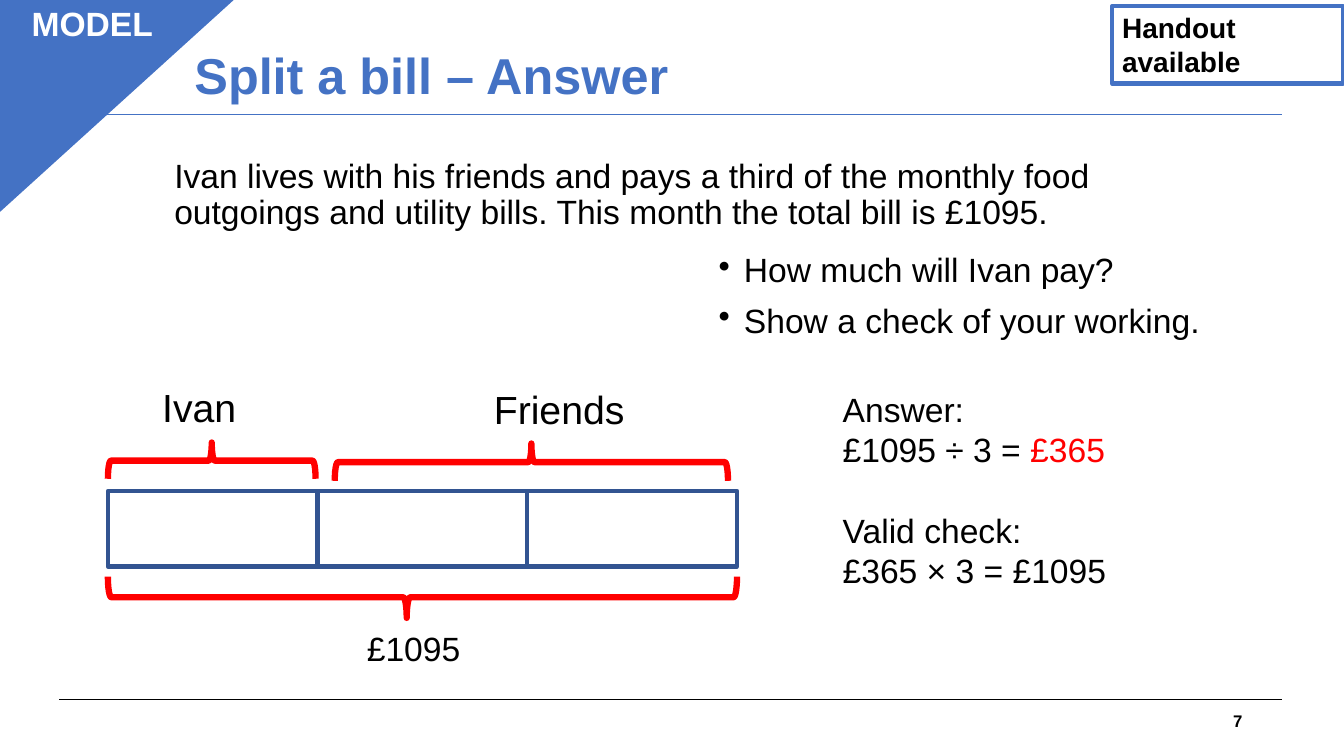
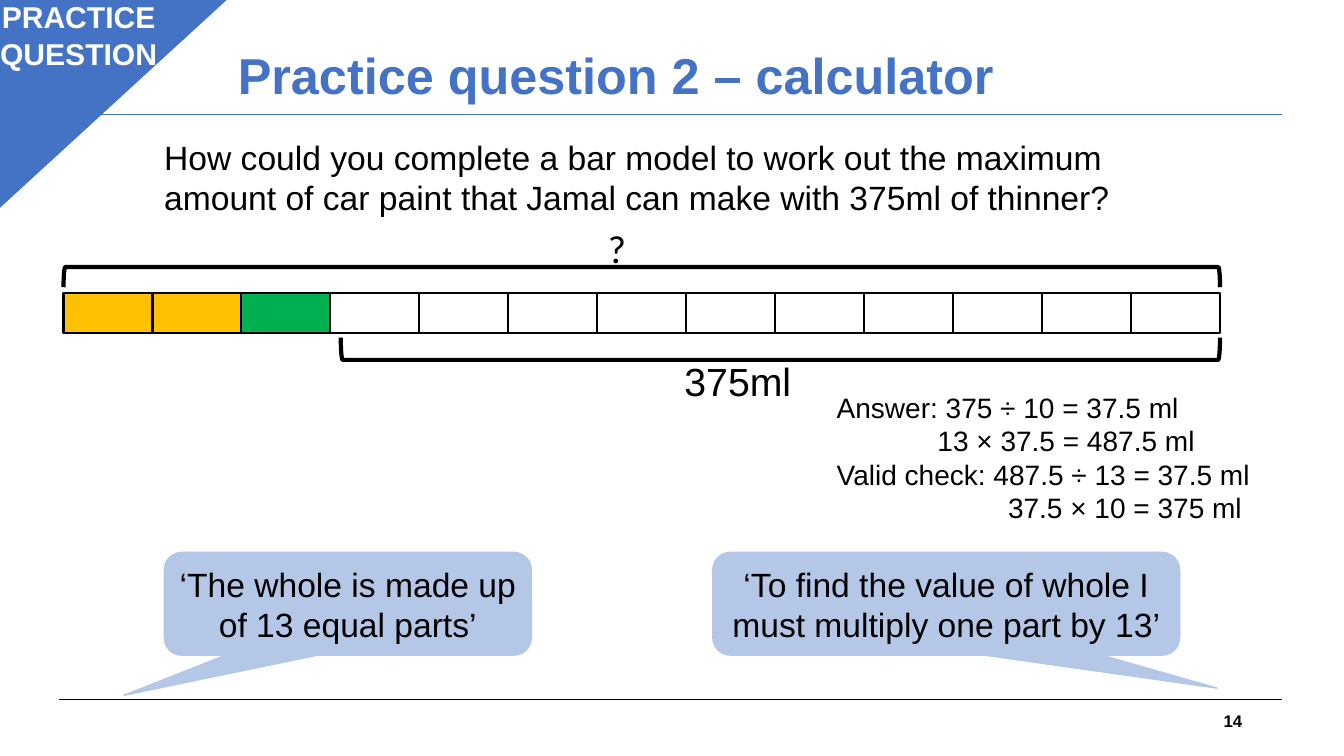
from lxml import etree
from pptx import Presentation
from pptx.dml.color import RGBColor
from pptx.enum.shapes import MSO_CONNECTOR, MSO_SHAPE as Kind
from pptx.enum.text import MSO_ANCHOR as Anchor, PP_ALIGN as Align
from pptx.oxml.ns import qn
from pptx.util import Inches, Pt

WIDE, HIGH = 13.33, 7.5
BLUE, NAVY, PALE = "4472C4", "325491", "B4C7E7"
BLACK, WHITE, RED = "000000", "FFFFFF", "FF0000"
GOLD, GREEN = "FFC000", "00B050"
TITLE = dict(size=36, color=BLUE, bold=True, line=0.9, anchor=Anchor.MIDDLE)
NUMBER = dict(size=12, bold=True, align=Align.RIGHT, anchor=Anchor.MIDDLE)
TAG = dict(color=WHITE, bold=True, align=Align.CENTER)
RULES = [(6.94, BLACK), (1.14, BLUE)]

# A paragraph is a list of (text, format) runs plus its own spacing.
SPLIT = dict(
    title="Split a bill – Answer", left=1.83, number="7", corner=(2.33, 2.12),
    tag=("MODEL", (0.03, -0.02, 1.77, 0.5), 24),
    texts=[
        ("Ivan lives with his friends and pays a third of the monthly food "
         "outgoings and utility bills. This month the total bill is £1095.",
         (1.63, 1.53, 9.79, 1.45), dict(line=0.9)),
        (["How much will Ivan pay?", "Show a check of your working."],
         (7.03, 2.47, 5.89, 1.28), dict(line=0.9, before=10, bullet="•")),
        ("Ivan", (1.51, 3.75, 1.02, 0.57), dict(size=28)),
        ("Friends", (4.8, 3.77, 1.59, 0.57), dict(size=28)),
        ("£1095", (3.54, 6.18, 1.59, 0.5), {}),
        (["Answer:",
          dict(runs=[("£1095 ÷ 3 = ", BLACK), ("£365", RED)]),
          dict(runs=[("Valid check:", BLACK)], before=28.5),
          "£365 × 3 = £1095"], (8.26, 3.81, 5.06, 2.12), {}),
    ],
    bar=dict(box=(1.07, 4.87, 6.24, 0.75), fills=[WHITE] * 3, edge=NAVY, weight=3),
    spans=dict(kind=Kind.LEFT_BRACE, edge=RED, weight=4.5, parts=[
        ((1.07, 5.72, 6.24, 0.41), 270, (0.083, 0.475)),
        ((1.07, 4.39, 2.06, 0.36), 90, ()),
        ((3.32, 4.4, 3.9, 0.37), 90, ())]),
    calls=[],
)
PAINT = dict(
    title="Practice question 2 – calculator", left=2.26, number="14",
    corner=(2.26, 2.08),
    tag=("PRACTICE QUESTION", (-0.28, -0.06, 2.12, 0.84), 21.5),
    texts=[
        ("How could you complete a bar model to work out the maximum amount of "
         "car paint that Jamal can make with 375ml of thinner?",
         (1.53, 1.31, 10.31, 0.91), {}),
        ("?", (5.93, 2.18, 0.38, 0.57), dict(size=28, font="Calibri")),
        ("375ml", (6.69, 3.5, 1.29, 0.57), dict(size=28)),
        (["Answer: 375 ÷ 10 = 37.5 ml",
          dict(runs=[("13 × 37.5 = 487.5 ml", BLACK)], indent=1),
          "Valid check: 487.5 ÷ 13 = 37.5 ml",
          dict(runs=[("37.5 × 10 = 375 ml", BLACK)], indent=1.7)],
         (8.2, 3.82, 4.63, 1.45), dict(size=20)),
    ],
    bar=dict(box=(0.63, 2.91, 11.47, 0.39),
             fills=[GOLD] * 2 + [GREEN] + [WHITE] * 10, edge=BLACK, weight=1.5),
    spans=dict(kind=Kind.LEFT_BRACKET, edge=BLACK, weight=3, parts=[
        ((3.38, 3.35, 8.72, 0.22), 270, ()),
        ((0.63, 2.65, 11.47, 0.2), 90, ())]),
    calls=[
        ("‘The whole is made up of 13 equal parts’",
         (1.63, 5.48, 3.64, 1.02), (-0.61, 0.89, 0.17)),
        ("‘To find the value of whole I must multiply one part by 13’",
         (7.07, 5.48, 4.63, 1.02), (0.58, 0.82, 0.17))],
)


def rgb(code):
    return RGBColor.from_string(code)


def indent(para, left, bullet=None):
    """Set the left margin in inches, with a hanging bullet if one is given."""
    props = para._p.get_or_add_pPr()
    props.set("marL", str(Inches(left)))
    if bullet:
        props.set("indent", str(-Inches(left)))
        etree.SubElement(props, qn("a:buChar")).set("char", bullet)


def write(frame, text, size=24, color=BLACK, bold=False, font="Arial",
          align=Align.LEFT, anchor=Anchor.TOP, line=None, before=0, bullet=None):
    frame.word_wrap = True
    frame.vertical_anchor = anchor
    for i, item in enumerate(text if isinstance(text, list) else [text]):
        if isinstance(item, str):
            item = dict(runs=[(item, color)])
        para = frame.add_paragraph() if i else frame.paragraphs[0]
        look = dict(alignment=align, line_spacing=line,
                    space_before=Pt(item.get("before", before)))
        for name, value in look.items():
            setattr(para, name, value)
        if bullet:
            indent(para, 0.25, bullet)
        elif "indent" in item:
            indent(para, item["indent"])
        for words, tint in item["runs"]:
            for j, part in enumerate(words.split("\n")):
                if j:
                    para.add_line_break()
                run = para.add_run()
                run.text = part
                for name, value in dict(size=Pt(size), bold=bold, name=font).items():
                    setattr(run.font, name, value)
                run.font.color.rgb = rgb(tint)


def label(slide, text, box, **look):
    write(slide.shapes.add_textbox(*map(Inches, box)).text_frame, text, **look)


def draw(slide, kind, box, fill=None, edge=BLACK, weight=1.0, turn=0, adjust=()):
    """Add a shape that covers box once it is turned by 0, 90 or 270 degrees."""
    x, y, w, h = box
    if turn:
        x, y, w, h = x + (w - h) / 2, y + (h - w) / 2, h, w
    shape = slide.shapes.add_shape(kind, *map(Inches, (x, y, w, h)))
    shape.rotation = turn
    shape.shadow.inherit = False
    for i, value in enumerate(adjust):
        shape.adjustments[i] = value
    if fill:
        shape.fill.solid()
        shape.fill.fore_color.rgb = rgb(fill)
    else:
        shape.fill.background()
    shape.line.color.rgb = rgb(edge)
    shape.line.width = Pt(weight)
    return shape


def rule(slide, y, color):
    ends = map(Inches, (0.59, y, 12.72, y))
    line = slide.shapes.add_connector(MSO_CONNECTOR.STRAIGHT, *ends)
    line.line.color.rgb = rgb(color)
    line.line.width = Pt(0.75)
    etree.SubElement(line._element.spPr, qn("a:effectLst"))


def build(deck, data):
    slide = deck.slides.add_slide(deck.slide_layouts[6])
    for y, color in RULES:
        rule(slide, y, color)
    right, low = data["corner"]
    draw(slide, Kind.RIGHT_TRIANGLE, (-0.03, -0.02, right + 0.03, low + 0.02),
         BLUE, BLUE, turn=90)
    words, box, size = data["tag"]
    label(slide, words, box, size=size, **TAG)
    label(slide, data["title"], (data["left"], 0.05, 9.55, 1.45), **TITLE)
    label(slide, data["number"], (9.42, 6.95, 3, 0.4), **NUMBER)

    bar = data["bar"]
    x, y, w, h = bar["box"]
    step = w / len(bar["fills"])
    for i, fill in enumerate(bar["fills"]):
        draw(slide, Kind.RECTANGLE, (x + i * step, y, step, h), fill,
             bar["edge"], bar["weight"])
    spans = data["spans"]
    for box, turn, adjust in spans["parts"]:
        draw(slide, spans["kind"], box, None, spans["edge"], spans["weight"],
             turn, adjust)
    for words, box, adjust in data["calls"]:
        call = draw(slide, Kind.ROUNDED_RECTANGULAR_CALLOUT, box, PALE, PALE,
                    adjust=adjust)
        write(call.text_frame, words, align=Align.CENTER, anchor=Anchor.MIDDLE)
    for words, box, look in data["texts"]:
        label(slide, words, box, **look)
    return slide


def main():
    deck = Presentation()
    deck.slide_width, deck.slide_height = Inches(WIDE), Inches(HIGH)
    split = build(deck, SPLIT)
    note = draw(split, Kind.RECTANGLE, (11.03, 0.06, 2.29, 0.77), None, BLUE, 3)
    write(note.text_frame, "Handout\navailable", size=20, bold=True)
    build(deck, PAINT)
    deck.save("out.pptx")


if __name__ == "__main__":
    main()
